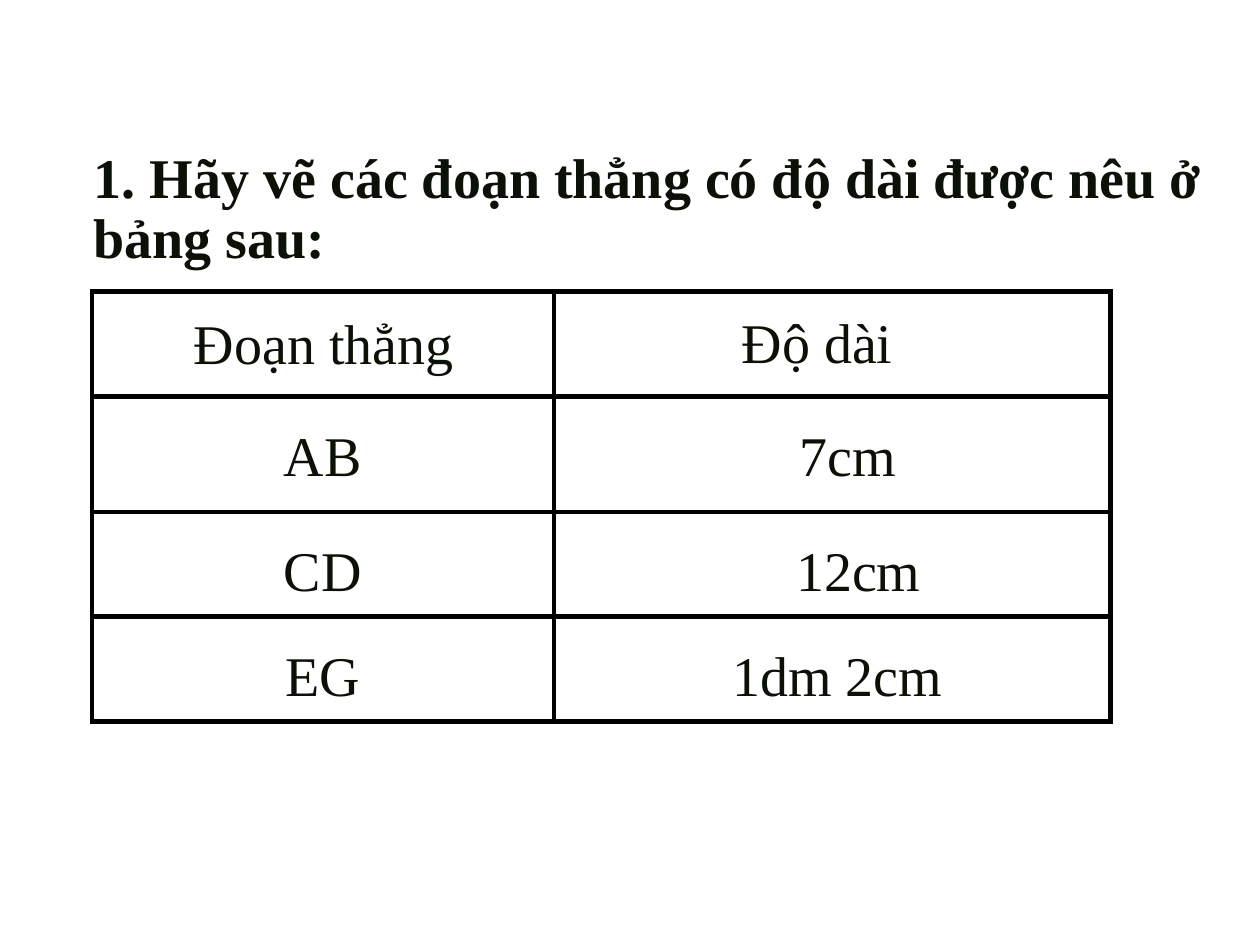
import pptx
import pptx.util
import pptx.dml.color
import pptx.enum.text
import pptx.oxml
import pptx.oxml.ns

Pt = pptx.util.Pt
ALIGN = pptx.enum.text.PP_ALIGN
INK = "0B1107"
LINE = "000000"


def color(code):
    return pptx.dml.color.RGBColor.from_string(code)


def write(text, left, top, width, height, align, bold=False):
    box = slide.shapes.add_textbox(Pt(left), Pt(top), Pt(width), Pt(height))
    frame = box.text_frame
    frame.word_wrap = True
    frame.margin_top = Pt(7.5)
    frame.margin_bottom = Pt(0)
    para = frame.paragraphs[0]
    para.alignment = align
    run = para.add_run()
    run.text = text
    run.font.name = "Times New Roman"
    run.font.size = Pt(32)
    run.font.bold = bold
    run.font.color.rgb = color(INK)
    return para


deck = pptx.Presentation()
deck.slide_width = Pt(720)
deck.slide_height = Pt(540)
slide = deck.slides.add_slide(deck.slide_layouts[6])

wide = [264, 318]
high = [60, 66, 60, 60]
table = slide.shapes.add_table(
    len(high), len(wide), Pt(52.5), Pt(166.5), Pt(sum(wide)), Pt(sum(high))
).table
table.first_row = False
table.horz_banding = False
for col, size in zip(table.columns, wide):
    col.width = Pt(size)
for row, size in zip(table.rows, high):
    row.height = Pt(size)

space = pptx.oxml.ns.nsdecls("a")
for cell in table.iter_cells():
    cell.fill.background()
    props = cell._tc.get_or_add_tcPr()
    for spot, side in enumerate(("lnL", "lnR", "lnT", "lnB")):
        edge = pptx.oxml.parse_xml(
            f'<a:{side} {space} w="{Pt(3)}"><a:solidFill>'
            f'<a:srgbClr val="{LINE}"/></a:solidFill></a:{side}>'
        )
        props.insert(spot, edge)

labels = [
    ("Đoạn thẳng", 29, 169, 312),
    ("Độ dài", 317, 168, 300),
    ("AB", 124.5, 232.5, 120),
    ("CD", 124.5, 298.5, 120),
    ("EG", 118.5, 358.5, 132),
    ("7cm", 418.5, 232.5, 132),
    ("12cm", 394.5, 298.5, 192),
    ("1dm 2cm", 352.5, 358.5, 252),
]
for text, left, top, width in labels:
    write(text, left, top, width, 46, ALIGN.CENTER)

task = write(
    "1. Hãy vẽ các đoạn thẳng có độ dài được nêu ở bảng sau:",
    46.5, 78, 676, 77, ALIGN.LEFT, True,
)
task.line_spacing = 0.9

deck.save("out.pptx")
